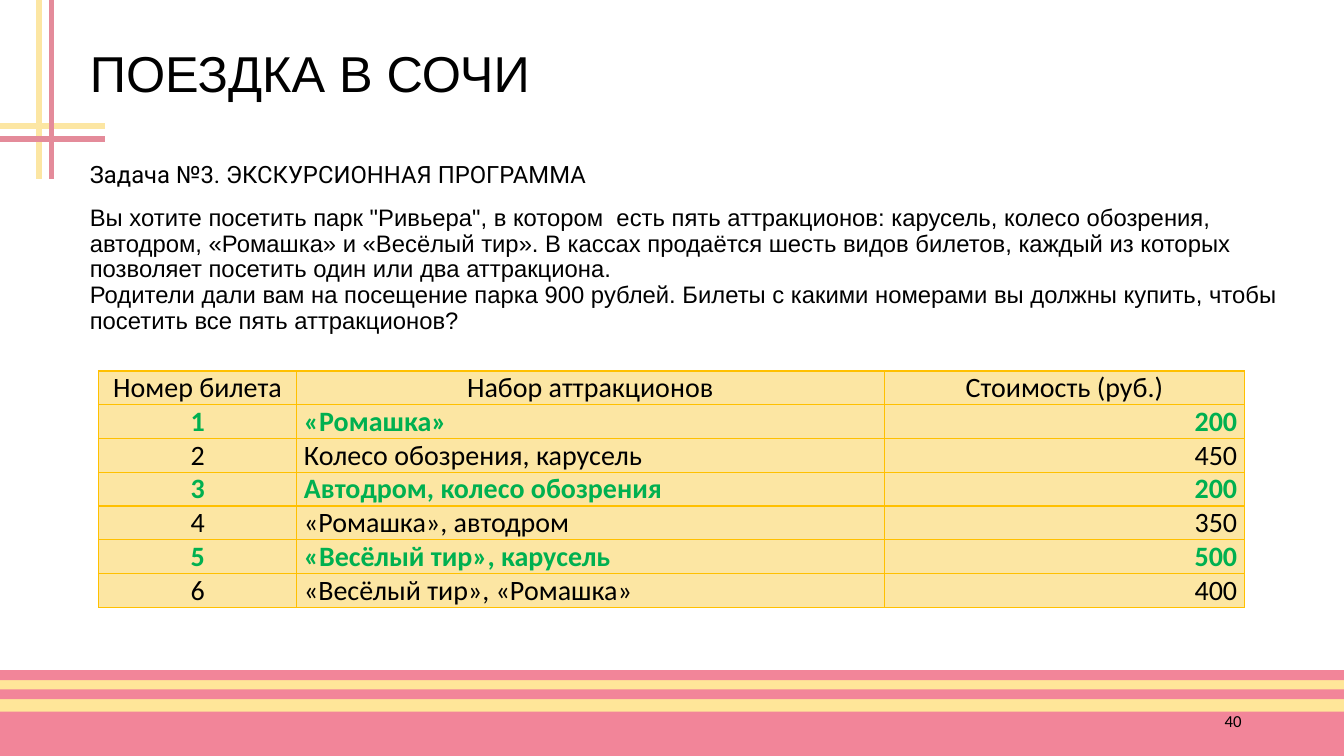
from dataclasses import dataclass
from typing import Any

from lxml.etree import SubElement
from pptx import Presentation
from pptx.dml.color import RGBColor
from pptx.enum.shapes import MSO_CONNECTOR, MSO_SHAPE
from pptx.enum.text import MSO_ANCHOR, MSO_AUTO_SIZE, PP_ALIGN
from pptx.oxml import parse_xml
from pptx.oxml.ns import nsdecls, qn
from pptx.util import Cm, Pt


@dataclass(frozen=True)
class Theme:
    text: str = "000000"
    chosen: str = "00B050"
    pink: str = "F28599"
    cream: str = "FFE699"
    pink_line: str = "E48B9A"
    cream_line: str = "FCE6A3"
    cell: str = "FCE6A3"
    border: str = "FFC000"
    title_size: int = 36
    body_size: int = 17
    table_size: int = 20
    number_size: int = 12
    sans: str = "Arial"
    heading: str = "Roboto"
    table: str = "Calibri"


@dataclass(frozen=True)
class Band:
    top: float
    height: float
    color: str


@dataclass(frozen=True)
class Rule:
    x1: float
    y1: float
    x2: float
    y2: float
    color: str


@dataclass(frozen=True)
class Ticket:
    number: int
    rides: str
    price: int
    chosen: bool = False


T = Theme()
WIDTH, HEIGHT = 33.87, 19.05

BANDS = [
    Band(16.92, 2.13, T.cream),
    Band(17.93, 1.12, T.pink),
    Band(17.37, 0.25, T.pink),
    Band(16.89, 0.25, T.pink),
]
RULES = [
    Rule(0, 3.18, 2.64, 3.18, T.cream_line),
    Rule(0.99, 0, 0.99, 4.5, T.cream_line),
    Rule(0, 3.51, 2.64, 3.51, T.pink_line),
    Rule(1.3, 0, 1.3, 4.5, T.pink_line),
]
TASK = [
    "Вы хотите посетить парк \"Ривьера\", в котором  есть пять аттракционов: карусель, "
    "колесо обозрения, автодром, «Ромашка» и «Весёлый тир». В кассах продаётся шесть "
    "видов билетов, каждый из которых позволяет посетить один или два аттракциона.",
    "Родители дали вам на посещение парка 900 рублей. Билеты с какими номерами вы "
    "должны купить, чтобы посетить все пять аттракционов?",
]
HEADERS = ("Номер билета", "Набор аттракционов", "Стоимость (руб.)")
COLUMNS = (4.98, 14.81, 9.09)
ALIGNS = (PP_ALIGN.CENTER, PP_ALIGN.LEFT, PP_ALIGN.RIGHT)
TICKETS = [
    Ticket(1, "«Ромашка»", 200, True),
    Ticket(2, "Колесо обозрения, карусель", 450),
    Ticket(3, "Автодром, колесо обозрения", 200, True),
    Ticket(4, "«Ромашка», автодром", 350),
    Ticket(5, "«Весёлый тир», карусель", 500, True),
    Ticket(6, "«Весёлый тир», «Ромашка»", 400),
]


def apply(target: Any, **values: Any) -> None:
    for name, value in values.items():
        setattr(target, name, value)


def place(sp: Any, left: float, top: float, width: float, height: float) -> None:
    apply(sp, left=Cm(left), top=Cm(top), width=Cm(width), height=Cm(height))


def write(p: Any, text: str, size: int, font: str, color: str = T.text,
          bold: bool = False, **paragraph: Any) -> None:
    apply(p, **paragraph)
    r = p.add_run()
    r.text = text
    apply(r.font, size=Pt(size), name=font, bold=bold)
    r.font.color.rgb = RGBColor.from_string(color)


def plain(p: Any) -> None:
    """Remove the bullet and hanging indent of a list paragraph."""
    pPr = p._p.get_or_add_pPr()
    pPr.set("marL", "0")
    pPr.set("indent", "0")
    SubElement(pPr, qn("a:buNone"))


def add_band(s: Any, band: Band) -> None:
    sp = s.shapes.add_shape(MSO_SHAPE.RECTANGLE, 0, Cm(band.top), Cm(WIDTH), Cm(band.height))
    sp.shadow.inherit = False
    sp.fill.solid()
    sp.fill.fore_color.rgb = RGBColor.from_string(band.color)
    sp.line.fill.background()


def add_rule(s: Any, rule: Rule) -> None:
    line = s.shapes.add_connector(
        MSO_CONNECTOR.STRAIGHT, Cm(rule.x1), Cm(rule.y1), Cm(rule.x2), Cm(rule.y2))
    line.line.color.rgb = RGBColor.from_string(rule.color)
    line.line.width = Pt(4)
    SubElement(line._element.spPr, qn("a:effectLst"))


def add_title(s: Any) -> None:
    sp = s.shapes.title
    place(sp, 2.01, 0.99, 29.54, 1.85)
    tf = sp.text_frame
    apply(tf, vertical_anchor=MSO_ANCHOR.MIDDLE, auto_size=MSO_AUTO_SIZE.NONE)
    write(tf.paragraphs[0], "ПОЕЗДКА В СОЧИ", T.title_size, T.sans,
          alignment=PP_ALIGN.LEFT, line_spacing=0.9)


def add_task(s: Any) -> None:
    sp = s.placeholders[1]
    place(sp, 2.01, 3.99, 30.84, 4.9)
    tf = sp.text_frame
    apply(tf, vertical_anchor=MSO_ANCHOR.TOP, auto_size=MSO_AUTO_SIZE.NONE)
    spacing = dict(line_spacing=0.9, space_before=Pt(0))
    write(tf.paragraphs[0], "Задача №3. ЭКСКУРСИОННАЯ ПРОГРАММА", T.body_size, T.heading,
          space_after=Pt(12), **spacing)
    for text in TASK:
        write(tf.add_paragraph(), text, T.body_size, T.sans, space_after=Pt(0), **spacing)
    for p in tf.paragraphs:
        plain(p)


def add_page_number(s: Any) -> None:
    tf = s.shapes.add_textbox(Cm(23.92), Cm(17.66), Cm(7.62), Cm(1.01)).text_frame
    apply(tf, word_wrap=True, vertical_anchor=MSO_ANCHOR.MIDDLE)
    write(tf.paragraphs[0], "40", T.number_size, T.table, alignment=PP_ALIGN.RIGHT)


def format_cell(cell: Any) -> None:
    apply(cell, margin_left=Cm(0.19), margin_right=Cm(0.19), margin_top=0, margin_bottom=0)
    cell.fill.solid()
    cell.fill.fore_color.rgb = RGBColor.from_string(T.cell)
    tcPr = cell._tc.get_or_add_tcPr()
    for i, side in enumerate("LRTB"):
        tcPr.insert(i, parse_xml(
            f'<a:ln{side} {nsdecls("a")} w="{Pt(1)}"><a:solidFill>'
            f'<a:srgbClr val="{T.border}"/></a:solidFill></a:ln{side}>'))


def add_tickets(s: Any) -> None:
    rows = len(TICKETS) + 1
    table = s.shapes.add_table(rows, len(COLUMNS), Cm(2.49), Cm(9.35),
                               Cm(sum(COLUMNS)), Cm(0.85 * rows)).table
    for column, width in zip(table.columns, COLUMNS):
        column.width = Cm(width)
    lines = [(HEADERS, (PP_ALIGN.CENTER,) * len(HEADERS), False)]
    lines += [((t.number, t.rides, t.price), ALIGNS, t.chosen) for t in TICKETS]
    for row, (values, aligns, chosen) in zip(table.rows, lines):
        for cell, value, align in zip(row.cells, values, aligns):
            format_cell(cell)
            write(cell.text_frame.paragraphs[0], str(value), T.table_size, T.table,
                  T.chosen if chosen else T.text, chosen, alignment=align)


def main() -> None:
    prs = Presentation()
    apply(prs, slide_width=Cm(WIDTH), slide_height=Cm(HEIGHT))
    s = prs.slides.add_slide(prs.slide_layouts[1])
    for band in BANDS:
        add_band(s, band)
    for rule in RULES:
        add_rule(s, rule)
    add_title(s)
    add_task(s)
    add_page_number(s)
    add_tickets(s)
    prs.save("out.pptx")


if __name__ == "__main__":
    main()
